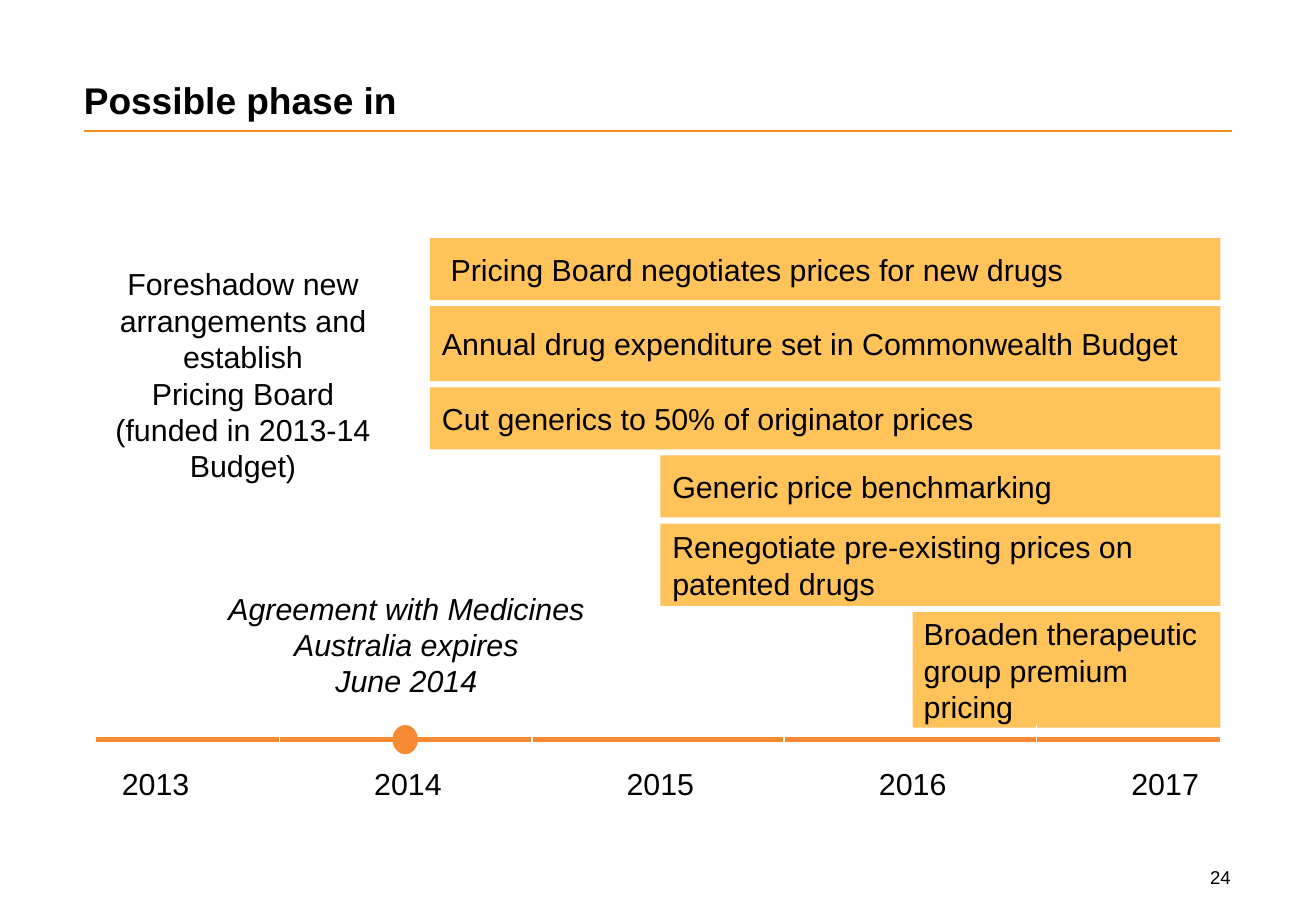
from pptx import Presentation
from pptx.dml.color import RGBColor
from pptx.enum.shapes import MSO_CONNECTOR, MSO_SHAPE
from pptx.enum.text import MSO_ANCHOR, MSO_AUTO_SIZE, PP_ALIGN
from pptx.oxml.ns import qn
from pptx.util import Pt
from lxml.etree import SubElement


def write_text(shape, lines, size=18, align=PP_ALIGN.CENTER, anchor=MSO_ANCHOR.MIDDLE,
               margins=(7.2, 3.6, 7.2, 3.6), bold=False, italic=False):
    frame = shape.text_frame
    frame.word_wrap = True
    frame.auto_size = MSO_AUTO_SIZE.NONE
    frame.vertical_anchor = anchor
    frame.margin_left, frame.margin_top, frame.margin_right, frame.margin_bottom = map(Pt, margins)
    frame.text = "\n".join(lines)
    for paragraph in frame.paragraphs:
        paragraph.alignment = align
        paragraph.line_spacing = 1.0
        paragraph.space_before = Pt(0)
        font = paragraph.font
        font.name = "Arial"
        font.size = Pt(size)
        font.bold = bold
        font.italic = italic
        font.color.rgb = RGBColor.from_string("000000")


def add_line(left, top, right, bottom, color, width):
    line = slide.shapes.add_connector(
        MSO_CONNECTOR.STRAIGHT, Pt(left), Pt(top), Pt(right), Pt(bottom))
    line.line.color.rgb = RGBColor.from_string(color)
    line.line.width = Pt(width)
    SubElement(line._element.spPr, qn("a:effectLst"))


presentation = Presentation()
presentation.slide_width = Pt(780)
presentation.slide_height = Pt(540)
slide = presentation.slides.add_slide(presentation.slide_layouts[5])

title = slide.shapes.title
title.left, title.top, title.width, title.height = Pt(49.7), Pt(45.4), Pt(544.3), Pt(26.6)
write_text(title, ["Possible phase in"], 22, PP_ALIGN.LEFT, MSO_ANCHOR.BOTTOM,
           (0, 0, 0, 0), bold=True)
add_line(49.7, 77.6, 730.1, 77.6, "F3901D", 1.5)

page_number = slide.shapes.add_textbox(Pt(668.2), Pt(509.8), Pt(68.4), Pt(20.9))
write_text(page_number, ["24"], 11, PP_ALIGN.RIGHT, MSO_ANCHOR.TOP)

timeline_right = 723.4
bar_gap = 3.6
bar_top = 141.1
bars = [
    ("Pricing Board negotiates prices for new drugs", 254.9, 36.8, 12.2),
    ("Annual drug expenditure set in Commonwealth Budget", 254.9, 44.5, 7.2),
    ("Cut generics to 50% of originator prices", 254.9, 36.8, 7.2),
    ("Generic price benchmarking", 391.4, 36.8, 7.2),
    ("Renegotiate pre-existing prices on patented drugs", 391.4, 48.8, 7.2),
    ("Broaden therapeutic group premium pricing", 541, 68.6, 6.5),
]
for text, left, height, indent in bars:
    bar = slide.shapes.add_shape(
        MSO_SHAPE.RECTANGLE, Pt(left), Pt(bar_top), Pt(timeline_right - left), Pt(height))
    bar.shadow.inherit = False
    bar.fill.solid()
    bar.fill.fore_color.rgb = RGBColor.from_string("FFC35A")
    bar.line.fill.background()
    write_text(bar, [text], align=PP_ALIGN.LEFT, margins=(indent, 3.6, 6.5, 3.6))
    bar_top += height + bar_gap

preparation = slide.shapes.add_textbox(Pt(61.9), Pt(141.1), Pt(164.2), Pt(162))
write_text(preparation, ["Foreshadow new arrangements and establish", "Pricing Board",
                         "(funded in 2013-14 Budget)"], margins=(0, 3.6, 0, 3.6))

agreement = slide.shapes.add_textbox(Pt(114.5), Pt(349.2), Pt(252.7), Pt(69.8))
write_text(agreement, ["Agreement with Medicines Australia expires", "June 2014"],
           margins=(7.2, 0, 7.2, 4.3), italic=True)

add_line(56.9, 438.5, timeline_right, 438.5, "F68B33", 3)

expiry_marker = slide.shapes.add_shape(
    MSO_SHAPE.OVAL, Pt(232.6), Pt(429.8), Pt(15.1), Pt(17.3))
expiry_marker.shadow.inherit = False
expiry_marker.fill.solid()
expiry_marker.fill.fore_color.rgb = RGBColor.from_string("F68B33")
expiry_marker.line.fill.background()

year_step = 149.6
for index, year in enumerate(range(2013, 2018)):
    label = slide.shapes.add_textbox(
        Pt(52.6 + index * year_step), Pt(450), Pt(79.2), Pt(33.8))
    write_text(label, [str(year)], anchor=MSO_ANCHOR.TOP)
    if year < 2017:
        tick = 165.6 + index * year_step
        add_line(tick, 429.8, tick, 447.8, "FFFFFF", 1)

presentation.save("out.pptx")
